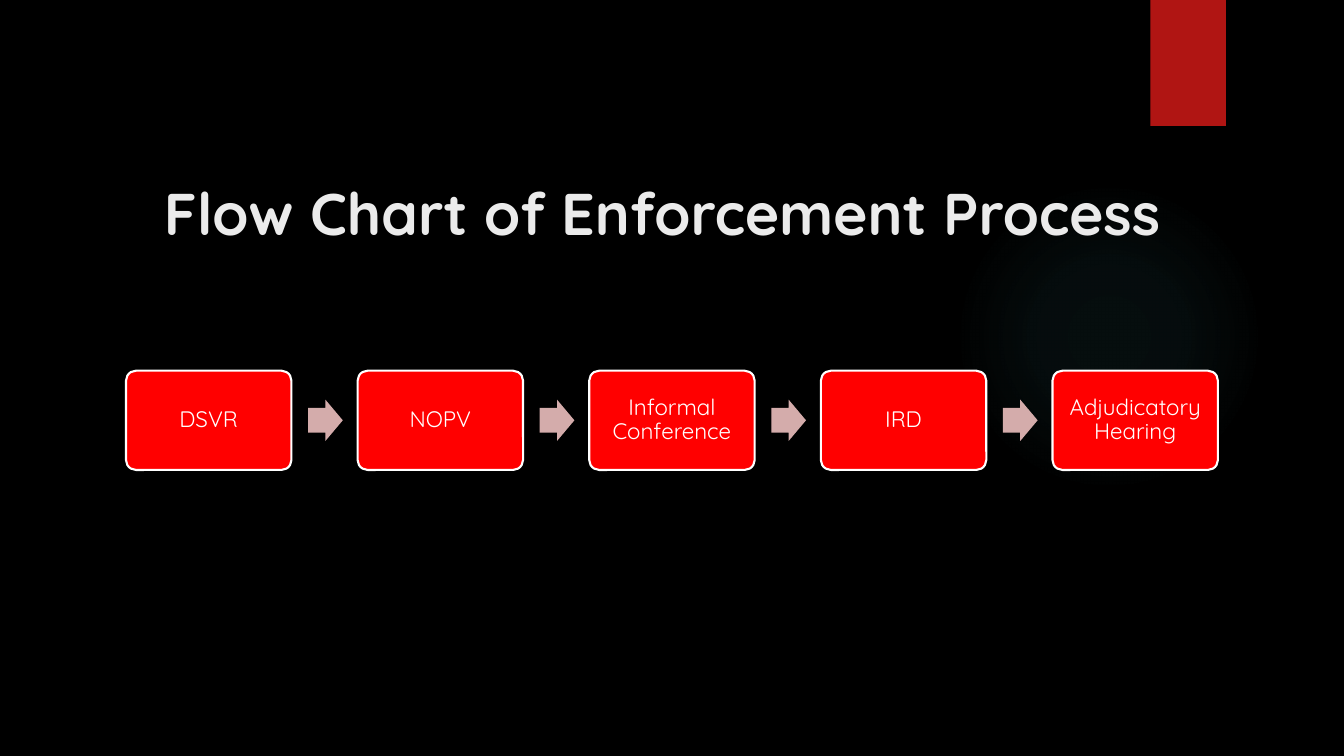
from dataclasses import dataclass

from lxml.etree import SubElement
from pptx import Presentation
from pptx.dml.color import RGBColor
from pptx.enum.shapes import MSO_SHAPE as Preset
from pptx.enum.text import MSO_ANCHOR as Anchor, MSO_AUTO_SIZE as AutoSize, PP_ALIGN as Align
from pptx.oxml.ns import qn
from pptx.util import Inches, Pt


@dataclass(frozen=True)
class Theme:
    font: str = "Quicksand"
    background: str = "000000"
    glow: str = "50B9C1"
    ribbon: str = "B01513"
    title: str = "EBEBEB"
    step: str = "FF0000"
    step_text: str = "FFFFFF"
    arrow: str = "D4ACAB"
    title_size: int = 42
    step_size: int = 16


class FlowSlide:
    def __init__(self, deck, theme):
        self.theme = theme
        self.width, self.height = deck.slide_width, deck.slide_height
        self.page = deck.slides.add_slide(deck.slide_layouts[5])
        fill = self.page.background.fill
        fill.solid()
        fill.fore_color.rgb = RGBColor.from_string(theme.background)

    def area(self, left, top, width, height):
        return (int(left * self.width), int(top * self.height),
                int(width * self.width), int(height * self.height))

    def shape(self, preset, area, color):
        shape = self.page.shapes.add_shape(preset, *area)
        shape.shadow.inherit = False
        shape.fill.solid()
        shape.fill.fore_color.rgb = RGBColor.from_string(color)
        shape.line.fill.background()
        return shape

    def label(self, shape, text, size, color, bold=False):
        shape.text_frame.text = text
        para = shape.text_frame.paragraphs[0]
        para.alignment = Align.CENTER
        font = para.runs[0].font
        font.name, font.size, font.bold = self.theme.font, Pt(size), bold
        font.color.rgb = RGBColor.from_string(color)
        return para

    def glow(self, area):
        shape = self.shape(Preset.OVAL, area, self.theme.glow)
        shape.fill.gradient()
        gradient = shape.element.spPr.find(qn("a:gradFill"))
        for child in list(gradient):
            gradient.remove(child)
        stops = SubElement(gradient, qn("a:gsLst"))
        for position, opacity in ((0, 7), (36, 6), (69, 0)):
            stop = SubElement(stops, qn("a:gs"), pos=str(position * 1000))
            color = SubElement(stop, qn("a:srgbClr"), val=self.theme.glow)
            SubElement(color, qn("a:alpha"), val=str(opacity * 1000))
        circle = SubElement(gradient, qn("a:path"), {"path": "circle"})
        SubElement(circle, qn("a:fillToRect"), {side: "50000" for side in "ltrb"})

    def ribbon(self, area):
        self.shape(Preset.RECTANGLE, area, self.theme.ribbon)

    def title(self, text, area):
        title = self.page.shapes.title
        title.left, title.top, title.width, title.height = area
        title.element.getparent().append(title.element)
        self.label(title, text, self.theme.title_size, self.theme.title, bold=True)
        title.text_frame.auto_size = AutoSize.NONE
        title.text_frame.vertical_anchor = Anchor.TOP

    def step(self, text, area):
        box = self.shape(Preset.ROUNDED_RECTANGLE, area, self.theme.step)
        box.adjustments[0] = 0.1
        box.line.color.rgb = RGBColor.from_string(self.theme.step_text)
        box.line.width = Pt(1.5)
        frame = box.text_frame
        frame.word_wrap = True
        frame.vertical_anchor = Anchor.MIDDLE
        frame.margin_left = frame.margin_right = Inches(0.1)
        frame.margin_top = frame.margin_bottom = Inches(0.1)
        para = self.label(box, text, self.theme.step_size, self.theme.step_text)
        para.line_spacing = 0.9

    def arrow(self, area):
        arrow = self.shape(Preset.RIGHT_ARROW, area, self.theme.arrow)
        arrow.adjustments[0] = 0.6

    def flow(self, steps, left, middle, width):
        gap = 0.4
        column = width / (len(steps) + gap * (len(steps) - 1))
        row = column * self.width / self.height

        def cell(start, columns, rows):
            return self.area(left + start * column, middle - rows * row / 2,
                             columns * column, rows * row)

        for index, text in enumerate(steps):
            start = index * (1 + gap)
            if index:
                self.arrow(cell(start - 0.3, 0.21, 0.25))
            self.step(text, cell(start, 1, 0.6))


def main():
    deck = Presentation()
    deck.slide_width, deck.slide_height = Inches(13.33), Inches(7.5)
    slide = FlowSlide(deck, Theme())
    slide.glow(slide.area(0.71, 0.24, 0.23, 0.41))
    slide.ribbon(slide.area(11.41 / 13.33, 0, 0.75 / 13.33, 1 / 6))
    slide.title("Flow Chart of Enforcement Process",
                slide.area(1.42 / 13.33, 1.7 / 7.5, 10.29 / 13.33, 0.15))
    steps = ["DSVR", "NOPV", "Informal Conference", "IRD", "Adjudicatory Hearing"]
    slide.flow(steps, left=1.25 / 13.33, middle=4.17 / 7.5, width=10.83 / 13.33)
    deck.save("out.pptx")


if __name__ == "__main__":
    main()
